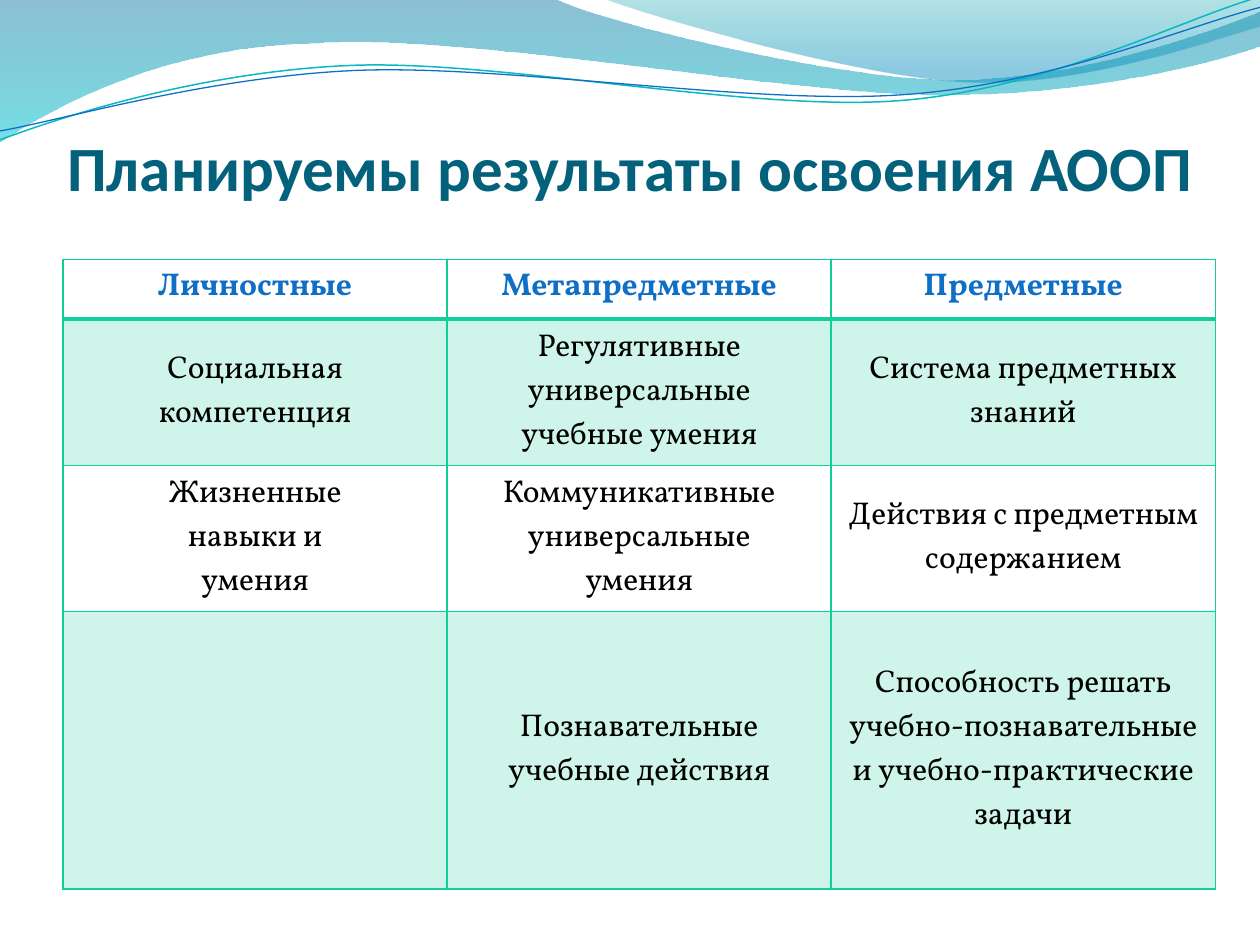
import math

from lxml import etree
from pptx import Presentation, util as u
from pptx.dml.color import RGBColor
from pptx.enum import text
from pptx.oxml.ns import qn

GREEN, BLUE = "10CF9B", "0F6FC6"
BAND = [(0, 0), (11.18, -0.03),
        (12.09, 0.43, 16.87, 1.6, 19.25, 1.6),
        (21.67, 1.6, 24.33, 0.66, 25.4, 0.23), (25.43, 0.91),
        (24.97, 1.12, 22.1, 1.93, 18.95, 1.91),
        (15.8, 1.91, 9.7, 0.71, 6.53, 0.86),
        (3.28, 0.91, 1.17, 2.11, -0.03, 2.87)]
SHEET = [(12.17, -0.03),
         (12.93, 0.28, 17.32, 1.57, 19.53, 1.65),
         (21.74, 1.75, 24.41, 0.81, 25.4, 0.53), (25.4, 0)]
TEAL_LINE = [(0, 2.82),
             (1.22, 2.36, 4.01, 1.45, 7.04, 1.32),
             (10.03, 1.19, 15.06, 2.26, 18.11, 2.03),
             (21.16, 1.8, 23.83, 0.38, 25.35, -0.05)]
BLUE_LINE = [(0, 2.64),
             (1.19, 2.44, 4.17, 1.55, 7.19, 1.42),
             (10.24, 1.3, 15.16, 2.13, 18.21, 1.91),
             (21.23, 1.7, 23.9, 0.53, 25.4, 0.15)]
TILT = 2.7
ROWS = [
    ["Личностные", "Метапредметные", "Предметные"],
    ["Социальная\nкомпетенция", "Регулятивные\nуниверсальные\nучебные умения",
     "Система предметных\nзнаний"],
    ["Жизненные\nнавыки и\nумения", "Коммуникативные\nуниверсальные\nумения",
     "Действия с предметным\nсодержанием"],
    ["", "Познавательные\nучебные действия",
     "Способность решать\nучебно-познавательные\nи учебно-практические\nзадачи"],
]
HEIGHTS = [1.2, 2.95, 2.95, 5.59]


def color(code):
    return RGBColor.from_string(code)


def fade(node, *levels):
    """Give the colours under node their opacity in percent."""
    for tag, level in zip(node.iter(qn("a:srgbClr")), levels):
        etree.SubElement(tag, qn("a:alpha")).set("val", str(level * 1000))


def turn(point, mid, angle):
    x, y = point[0] - mid[0], point[1] - mid[1]
    cos, sin = math.cos(math.radians(angle)), math.sin(math.radians(angle))
    return mid[0] + x * cos - y * sin, mid[1] + x * sin + y * cos


def add_path(slide, left, top, steps, close, mid=(0, 0), tilt=0):
    """Draw line steps (x, y) and cubic steps (six numbers), leaning by tilt."""
    pairs = [step[k:k + 2] for step in steps for k in range(0, len(step), 2)]
    spots = [turn(pair, mid, tilt) for pair in pairs]
    points = [(u.Cm(left + x), u.Cm(top + y)) for x, y in spots]
    pen = slide.shapes.build_freeform(*points[0])
    pen.add_line_segments(points[1:], close=close)
    shape = pen.convert_to_shape()
    shape.shadow.inherit = False
    shape.rotation = -tilt % 360
    lines = iter(list(shape._element.iter(qn("a:lnTo"))))
    for step in steps[1:]:
        line = next(lines)
        if len(step) == 6:
            line.addprevious(curve := etree.Element(qn("a:cubicBezTo")))
            for part in (line, next(lines), next(lines)):
                curve.append(part[0])
                part.getparent().remove(part)
    return shape


def add_waves(slide, left, top):
    for steps, stops in ((BAND, [(0, "0074A1", 45), (1, "00C6CF", 55)]),
                         (SHEET, [(0, "00A1A9", 30), (0.8, "008BBF", 45)])):
        shape = add_path(slide, left, top, steps, True)
        shape.line.fill.background()
        shape.fill.gradient()
        shape.fill.gradient_angle = 270
        for stop, (place, code, _) in zip(shape.fill.gradient_stops, stops):
            stop.position = place
            stop.color.rgb = color(code)
        fade(shape._element.spPr.find(qn("a:gradFill")),
             *[level for _, _, level in stops])
    for steps, code, width, mid in (
            (TEAL_LINE, "0AB8BF", 0.85, (12.67, 1.46)),
            (BLUE_LINE, BLUE, 0.75, (12.69, 1.5))):
        shape = add_path(slide, left, top, steps, False, mid, TILT)
        shape.fill.background()
        shape.line.color.rgb = color(code)
        shape.line.width = u.Pt(width)


def write(frame, words, size, face, code, bold):
    par = frame.paragraphs[0]
    par.text = words
    par.alignment = text.PP_ALIGN.CENTER
    for run in par.runs:
        font = run.font
        font.size, font.name, font.bold = u.Pt(size), face, bold
        font.color.rgb = color(code)


def add_title(slide, left, top, width, height):
    box = slide.shapes.add_textbox(*map(u.Cm, (left, top, width, height)))
    frame = box.text_frame
    frame.word_wrap = True
    frame.vertical_anchor = text.MSO_ANCHOR.BOTTOM
    frame.margin_left = frame.margin_right = frame.margin_bottom = 0
    write(frame, "Планируемы результаты освоения АООП",
          36, "Calibri", "04617B", True)


def add_border(cell, side, width):
    line = etree.SubElement(cell._tc.get_or_add_tcPr(), qn("a:ln" + side))
    line.set("w", str(u.Pt(width)))
    fill = etree.SubElement(line, qn("a:solidFill"))
    etree.SubElement(fill, qn("a:srgbClr")).set("val", GREEN)


def add_grid(slide, left, top, width):
    table = slide.shapes.add_table(
        len(ROWS), len(ROWS[0]),
        *map(u.Cm, (left, top, width, sum(HEIGHTS)))).table
    table.horz_banding = False
    for col in table.columns:
        col.width = u.Cm(width / len(ROWS[0]))
    for r, row in enumerate(ROWS):
        table.rows[r].height = u.Cm(HEIGHTS[r])
        for c, words in enumerate(row):
            cell = table.cell(r, c)
            for side in "LRTB":
                thick = (r, side) in ((0, "B"), (1, "T"))
                add_border(cell, side, 2 if thick else 1)
            if r % 2:
                cell.fill.solid()
                cell.fill.fore_color.rgb = color(GREEN)
                fade(cell._tc.tcPr.find(qn("a:solidFill")), 20)
            else:
                cell.fill.background()
            if r:
                cell.vertical_anchor = text.MSO_ANCHOR.MIDDLE
            write(cell.text_frame, words, 18, "Vollkorn",
                  "000000" if r else BLUE, r == 0)


def main():
    deck = Presentation()
    deck.slide_width, deck.slide_height = u.Cm(25.4), u.Cm(19.05)
    slide = deck.slides.add_slide(deck.slide_layouts[6])
    add_waves(slide, 0, 0)
    add_title(slide, 1.27, 1.96, 22.86, 2.16)
    add_grid(slide, 1.27, 5.23, 23.23)
    deck.save("out.pptx")


if __name__ == "__main__":
    main()
